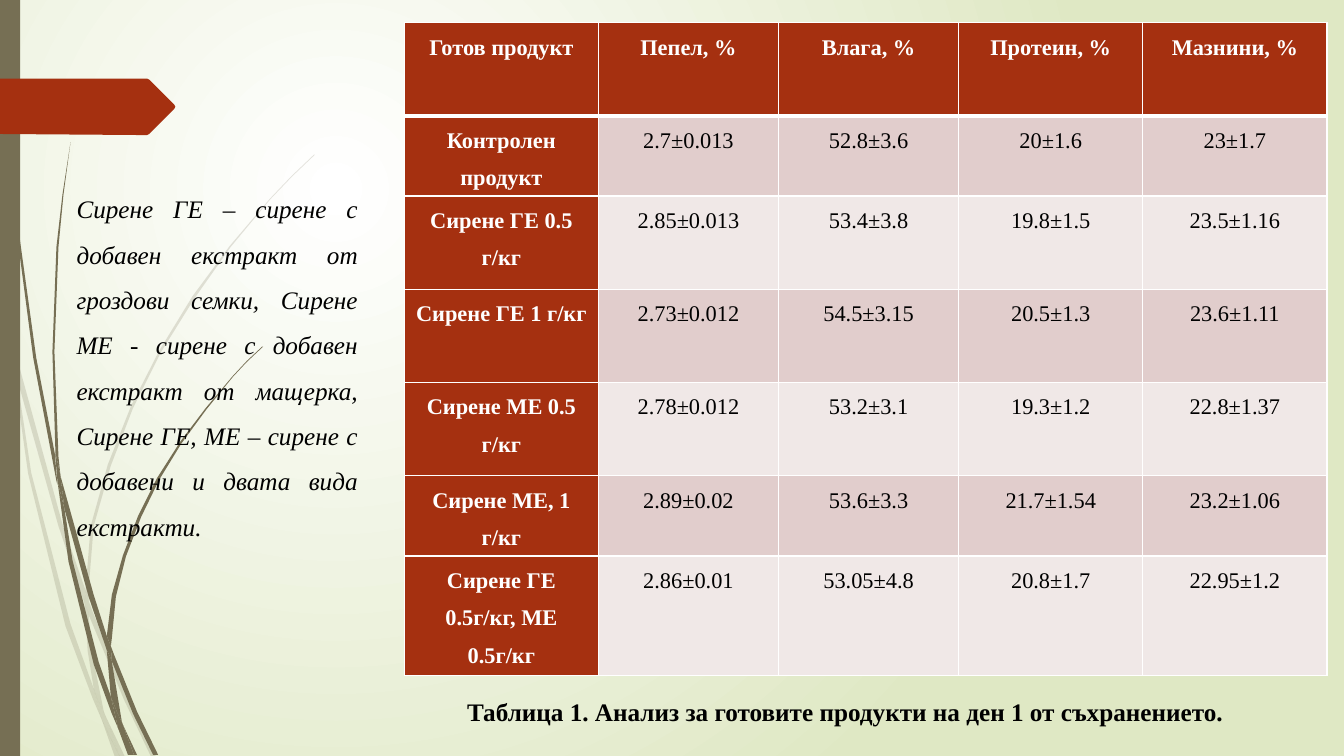
"""Build the slide on the composition of the cheese products."""
from lxml.etree import SubElement as Sub
from pptx import Presentation
from pptx.dml.color import RGBColor as Rgb
from pptx.enum.shapes import MSO_SHAPE as Kind
from pptx.enum.text import MSO_AUTO_SIZE as Fit, PP_ALIGN as Align
from pptx.oxml.ns import qn
from pptx.util import Cm, Pt

HEAD = ["Готов продукт", "Пепел, %", "Влага, %", "Протеин, %", "Мазнини, %"]
ROWS = [
    HEAD,
    ["Контролен продукт", "2.7±0.013", "52.8±3.6", "20±1.6", "23±1.7"],
    ["Сирене ГЕ 0.5 г/кг", "2.85±0.013", "53.4±3.8", "19.8±1.5", "23.5±1.16"],
    ["Сирене ГЕ 1 г/кг", "2.73±0.012", "54.5±3.15", "20.5±1.3", "23.6±1.11"],
    ["Сирене МЕ 0.5 г/кг", "2.78±0.012", "53.2±3.1", "19.3±1.2", "22.8±1.37"],
    ["Сирене МЕ, 1 г/кг", "2.89±0.02", "53.6±3.3", "21.7±1.54", "23.2±1.06"],
    ["Сирене ГЕ 0.5г/кг, МЕ 0.5г/кг", "2.86±0.01", "53.05±4.8", "20.8±1.7", "22.95±1.2"],
]
WIDE = [4.89, 4.54, 4.54, 4.64, 4.64]
HIGH = [2.35, 2.02, 2.35, 2.35, 2.35, 2.02, 3.02]
NOTE = ("Сирене ГЕ – сирене с добавен екстракт от гроздови семки, Сирене МЕ - сирене с "
        "добавен екстракт от мащерка, Сирене ГЕ, МЕ – сирене с добавени и двата вида екстракти.")
TITLE = "Таблица 1. Анализ за готовите продукти на ден 1 от съхранението."

UNIT = Cm(0.0254)
PALE = [
    [(11, 350), (9, 322), (0, 282), (0, 299), (10, 344)],
    [(58, 522), (84, 599), (85, 586), (62, 520), (14, 345), (17, 376)],
    [(92, 607), (88, 596), (88, 610), (123, 694), (150, 751), (155, 751), (127, 692)],
    [(119, 751), (124, 751), (105, 711)],
    [(93, 683), (70, 619), (31, 469), (17, 376), (11, 350), (28, 470), (65, 621), (92, 693),
     (101, 714), (99, 707)],
    [(84, 599), (87, 646), (93, 683), (96, 692), (105, 711), (103, 706), (91, 646), (88, 610),
     (88, 608)],
    [(88, 584), (93, 522), (110, 462), (132, 405), (160, 349), (193, 296), (229, 245),
     (268, 198), (290, 175), (312, 154), (312, 153), (289, 175), (268, 197), (228, 244),
     (191, 294), (158, 348), (130, 403), (107, 461), (90, 522), (85, 584), (85, 586), (88, 596)],
    [(101, 714), (114, 751), (119, 751)],
    [(88, 608), (88, 610), (88, 596), (85, 586), (84, 599)],
    [(96, 692), (93, 683), (99, 707), (101, 714), (119, 751), (105, 711)],
]
DARK = [
    [(7, 110), (17, 233), (33, 355), (56, 477), (57, 481), (55, 457), (55, 453), (36, 355),
     (19, 232), (8, 109), (5, 48), (4, 0), (3, 0), (4, 48)],
    [(88, 592), (106, 645), (106, 633), (106, 631), (93, 590), (60, 472), (64, 505)],
    [(113, 649), (110, 641), (111, 656), (132, 708), (152, 749), (157, 749), (136, 706)],
    [(110, 691), (98, 657), (72, 556), (64, 505), (57, 477), (68, 557), (93, 659), (111, 708),
     (117, 722), (116, 717)],
    [(60, 472), (58, 453), (54, 349), (58, 245), (63, 193), (70, 141), (62, 193), (56, 245),
     (52, 349), (55, 449)],
    [(133, 749), (136, 749), (122, 719)],
    [(57, 477), (64, 505), (60, 472), (55, 449), (55, 453)],
    [(111, 633), (115, 592), (125, 552), (140, 513), (158, 476), (180, 440), (205, 406),
     (231, 374), (245, 359), (261, 344), (260, 344), (245, 358), (231, 373), (204, 405),
     (179, 438), (156, 474), (137, 512), (122, 551), (111, 590), (106, 631), (110, 641)],
    [(117, 722), (127, 749), (131, 749)],
    [(106, 645), (110, 691), (116, 706), (122, 719), (121, 716), (111, 656), (109, 651)],
    [(106, 645), (109, 651), (111, 656), (110, 641), (106, 631), (106, 633)],
    [(116, 706), (110, 691), (116, 717), (117, 722), (130, 749), (133, 749), (122, 719)],
]
TAG = [(173, 108), (148, 133), (146, 134), (136, 134), (0, 133), (0, 78), (146, 78),
       (148, 79), (173, 104), (174, 106)]


class Theme:
    """Hold the colours and type sizes."""
    font = "Times New Roman"
    cell, body = Pt(16), Pt(18)
    rust, stem, glow, edge = "A53010", "766F54", "FFFFFF", "DFE8C4"
    bands = ["F0E8E7", "E1CDCC"]
    white, black = "FFFFFF", "000000"


def paint(shape, hue, alpha=None):
    """Fill a shape plainly, without line or shadow."""
    shape.shadow.inherit = False
    shape.fill.solid()
    shape.fill.fore_color.rgb = Rgb.from_string(hue)
    shape.line.fill.background()
    if alpha:
        tone = shape.fill._xPr.find(".//" + qn("a:srgbClr"))
        Sub(tone, qn("a:alpha")).set("val", str(alpha * 1000))


def trace(shapes, dots, hue, alpha=None):
    """Draw a closed outline."""
    pen = shapes.build_freeform(*dots[0], scale=UNIT)
    pen.add_line_segments(dots[1:], close=True)
    paint(pen.convert_to_shape(), hue, alpha)


def write(frame, text, align, size, hue, after=0, bold=False, slant=False):
    """Set one paragraph of text."""
    para = frame.paragraphs[0]
    para.text = text
    para.alignment, para.line_spacing, para.space_after = align, 1.5, Pt(after)
    font = para.font
    font.name, font.size, font.bold, font.italic = Theme.font, size, bold, slant
    font.color.rgb = Rgb.from_string(hue)


def label(shapes, box, text, align, **style):
    """Add a wrapped text box."""
    frame = shapes.add_textbox(*map(Cm, box)).text_frame
    frame.word_wrap, frame.auto_size = True, Fit.SHAPE_TO_FIT_TEXT
    write(frame, text, align, Theme.body, Theme.black, after=8, **style)


def border(cell, side, width):
    """Give one side of a cell a white line."""
    line = Sub(cell._tc.get_or_add_tcPr(), qn("a:ln" + side), w=str(Pt(width)))
    Sub(Sub(line, qn("a:solidFill")), qn("a:srgbClr")).set("val", Theme.white)


def grid(shapes):
    """Add the table of results."""
    table = shapes.add_table(len(ROWS), len(HEAD), Cm(10.19), Cm(0.57),
                             Cm(sum(WIDE)), Cm(sum(HIGH))).table
    for col, wide in zip(table.columns, WIDE):
        col.width = Cm(wide)
    for r, (row, high) in enumerate(zip(ROWS, HIGH)):
        table.rows[r].height = Cm(high)
        for c, text in enumerate(row):
            cell = table.cell(r, c)
            named = r == 0 or c == 0
            cell.margin_left = cell.margin_right = Cm(0.17)
            cell.margin_top = cell.margin_bottom = 0
            for side, width in zip("LRTB", (1, 1, 3 if r == 1 else 1, 3 if r == 0 else 1)):
                border(cell, side, width)
            cell.fill.solid()
            cell.fill.fore_color.rgb = Rgb.from_string(Theme.rust if named else Theme.bands[r % 2])
            write(cell.text_frame, text, Align.CENTER, Theme.cell,
                  Theme.white if named else Theme.black,
                  after=10 if c == 0 and r in (1, 5) else 0, bold=named)


def shade(slide):
    """Set the round glow behind the slide."""
    fill = slide.background.fill
    fill.gradient()
    for stop, hue in zip(fill.gradient_stops, (Theme.glow, Theme.edge)):
        stop.color.rgb = Rgb.from_string(hue)
    grad = slide.element.find(".//" + qn("a:gradFill"))
    grad.remove(grad.find(qn("a:lin")))
    ring = Sub(grad, qn("a:path"), path="circle")
    Sub(ring, qn("a:fillToRect"), l="50000", t="50000", r="100000", b="100000")


def main():
    """Build and save the slide."""
    deck = Presentation()
    deck.slide_width, deck.slide_height = Cm(33.87), Cm(19.05)
    slide = deck.slides.add_slide(deck.slide_layouts[6])
    shapes = slide.shapes
    shade(slide)
    for blades, alpha in ((PALE, 20), (DARK, None)):
        group = shapes.add_group_shape()
        for dots in blades:
            trace(group.shapes, dots, Theme.stem, alpha)
    paint(shapes.add_shape(Kind.RECTANGLE, 0, 0, Cm(0.51), deck.slide_height), Theme.stem)
    trace(shapes, TAG, Theme.rust)
    grid(shapes)
    label(shapes, (1.68, 4.37, 7.59, 9.5), NOTE, Align.JUSTIFY, slant=True)
    label(shapes, (9.25, 17.04, 24.1, 1.42), TITLE, Align.CENTER, bold=True)
    deck.save("out.pptx")


if __name__ == "__main__":
    main()
